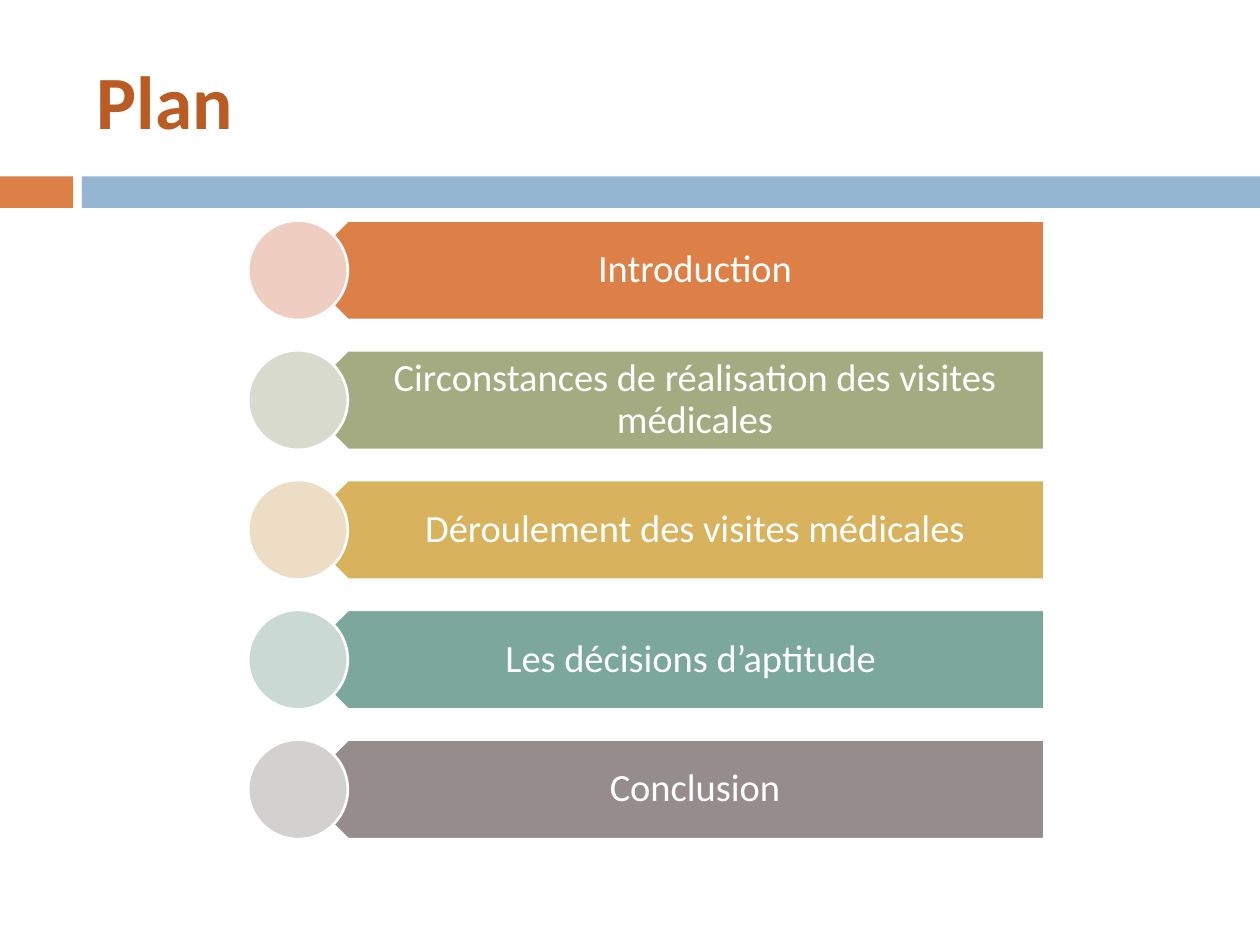
from pptx import Presentation
from pptx.dml.color import RGBColor
from pptx.enum.shapes import MSO_SHAPE
from pptx.enum.text import MSO_ANCHOR, PP_ALIGN
from pptx.util import Inches, Pt

RECT = MSO_SHAPE.RECTANGLE
ARROW = MSO_SHAPE.PENTAGON
DISC = MSO_SHAPE.OVAL
MIDDLE = MSO_ANCHOR.MIDDLE
LEFT, CENTER = PP_ALIGN.LEFT, PP_ALIGN.CENTER

TITLE = "Plan"
ITEMS = [
    ("Introduction", "orange", "peach"),
    ("Circonstances de réalisation des visites médicales", "olive", "sage"),
    ("Déroulement des visites médicales", "gold", "cream"),
    ("Les décisions d’aptitude ", "teal", "mist"),
    ("Conclusion", "taupe", "ash"),
]
COLORS = {
    "white": "FFFFFF", "rust": "B95B22", "blue": "94B6D2",
    "orange": "DD8047", "peach": "EFCDC1",
    "olive": "A5AB81", "sage": "D8DACD",
    "gold": "D8B25C", "cream": "EDDDC4",
    "teal": "7BA79D", "mist": "CBD9D5",
    "taupe": "968C8C", "ash": "D3D0D0",
}
FONT = "Calibri"
WIDE, HIGH = 10, 7.5
BAND_TOP, BAND_HIGH = 1.4, 0.25
BANDS = [(0, 0.58, "orange"), (0.65, WIDE - 0.65, "blue")]
TOP, STEP, SIZE = 1.75, 1.03, 0.79
EDGE, RIGHT = 1.97, 8.29
START = EDGE + SIZE / 2
INNER = START + SIZE / 4


def color(name):
    return RGBColor.from_string(COLORS[name])


def draw(slide, kind, box, fill, line=None):
    shape = slide.shapes.add_shape(kind, *map(Inches, box))
    shape.shadow.inherit = False
    shape.fill.solid()
    shape.fill.fore_color.rgb = color(fill)
    if line:
        shape.line.color.rgb = color(line)
        shape.line.width = Pt(1.5)
    else:
        shape.line.fill.background()
    return shape


def write(slide, text, box, size, hue, pads, align, bold=False):
    frame = slide.shapes.add_textbox(*map(Inches, box)).text_frame
    frame.word_wrap = True
    frame.vertical_anchor = MIDDLE
    (frame.margin_left, frame.margin_top,
     frame.margin_right, frame.margin_bottom) = map(Inches, pads)
    frame.text = text
    para = frame.paragraphs[0]
    para.alignment = align
    font = para.runs[0].font
    font.name, font.size, font.bold = FONT, Pt(size), bold
    font.color.rgb = color(hue)
    return para


def main():
    deck = Presentation()
    deck.slide_width, deck.slide_height = Inches(WIDE), Inches(HIGH)
    slide = deck.slides.add_slide(deck.slide_layouts[6])

    for left, width, fill in BANDS:
        draw(slide, RECT, (left, BAND_TOP, width, BAND_HIGH), fill)
    write(slide, TITLE, (0.67, 0.25, 8.92, 1.08), 43, "rust",
          (0.1, 0.05, 0.1, 0.05), LEFT, True)

    for row, (text, dark, light) in enumerate(ITEMS):
        top = TOP + row * STEP
        arrow = draw(slide, ARROW, (START, top, RIGHT - START, SIZE), dark, "white")
        arrow.rotation = 180
        para = write(slide, text, (INNER, top, RIGHT - INNER, SIZE), 22, "white",
                     (0.35, 0.09, 0.17, 0.09), CENTER)
        para.line_spacing = 0.9
        draw(slide, DISC, (EDGE, top, SIZE, SIZE), light, "white")

    deck.save("out.pptx")


if __name__ == "__main__":
    main()
